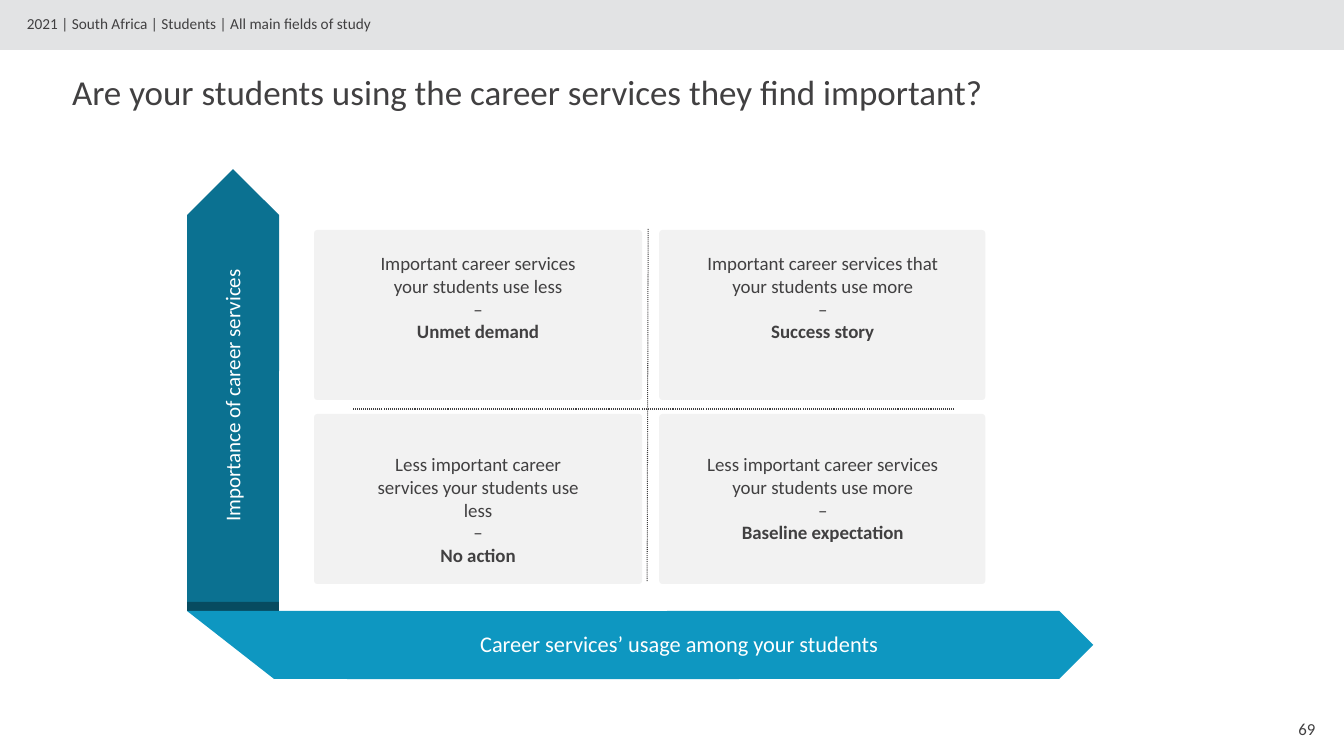
from lxml.etree import SubElement
from pptx import Presentation
from pptx.dml.color import RGBColor
from pptx.enum.dml import MSO_LINE
from pptx.enum.shapes import MSO_CONNECTOR, MSO_SHAPE
from pptx.enum.text import MSO_ANCHOR, MSO_AUTO_SIZE, PP_ALIGN
from pptx.oxml.ns import qn
from pptx.util import Inches, Pt

PX = 914400 / 100.8
INK = RGBColor(0x41, 0x40, 0x41)
WHITE = RGBColor(0xFF, 0xFF, 0xFF)
BAND = RGBColor(0xE2, 0xE3, 0xE4)
CARD = RGBColor(0xF2, 0xF2, 0xF2)
USAGE_BLUE = RGBColor(0x0E, 0x97, 0xC1)
IMPORTANCE_BLUE = RGBColor(0x0B, 0x71, 0x91)
FOLD_BLUE = RGBColor(0x07, 0x4B, 0x60)

# Each row of quadrants: inset of the text from the card's top, then its cards
QUADRANTS = [
    (17, [("Important career services your students use less", "Unmet demand"),
          ("Important career services that your students use more", "Success story")]),
    (34, [("Less important career services your students use less", "No action"),
          ("Less important career services your students use more", "Baseline expectation")]),
]
# Each column: left within the matrix, card width, text inset, text width
COLUMNS = [(0, 328, 48, 232), (345, 326, 37, 253)]


def emu(*lengths):
    return [round(length * PX) for length in lengths]


def set_all(target, values):
    for name, value in values.items():
        setattr(target, name, value)


def write(holder, lines, size, color=INK, align=PP_ALIGN.CENTER, anchor=MSO_ANCHOR.TOP):
    """Fill a text holder; lines are (text, bold) pairs."""
    frame = holder.text_frame
    set_all(frame, {"word_wrap": True, "auto_size": MSO_AUTO_SIZE.NONE,
                    "vertical_anchor": anchor})
    for index, (text, bold) in enumerate(lines):
        paragraph = frame.add_paragraph() if index else frame.paragraphs[0]
        paragraph.alignment = align
        run = paragraph.add_run()
        run.text = text
        set_all(run.font, {"name": "Calibri", "size": Pt(size), "bold": bold})
        run.font.color.rgb = color


def add_label(slide, box, lines, size, rotation=0, **style):
    label = slide.shapes.add_textbox(*emu(*box))
    label.rotation = rotation
    write(label, lines, size, **style)


def add_block(slide, kind, box, color, rotation=0, adjust=None):
    block = slide.shapes.add_shape(kind, *emu(*box))
    block.shadow.inherit = False
    block.rotation = rotation
    block.fill.solid()
    block.fill.fore_color.rgb = color
    block.line.fill.background()
    if adjust is not None:
        block.adjustments[0] = adjust
    return block


def add_divider(slide, start, end):
    divider = slide.shapes.add_connector(MSO_CONNECTOR.STRAIGHT, *emu(*start, *end))
    set_all(divider.line, {"width": Pt(0.75), "dash_style": MSO_LINE.ROUND_DOT})
    divider.line.color.rgb = INK
    SubElement(divider.element.spPr, qn("a:effectLst"))


def add_header(slide, left, top, width, height):
    add_block(slide, MSO_SHAPE.RECTANGLE, (left, top, width, height), BAND)
    add_label(slide, (left + 17, top + 9, 1145, 31),
              [("2021 | South Africa | Students | All main fields of study", False)],
              10.9, align=PP_ALIGN.LEFT)


def add_title(slide, *box):
    title = slide.shapes.title
    set_all(title, dict(zip(("left", "top", "width", "height"), emu(*box))))
    write(title, [("Are your students using the career services they find important?", False)],
          25, align=PP_ALIGN.LEFT)


def add_matrix(slide, left, top, width, height):
    row_height, row_step = 170, 184
    for row, (text_drop, cards) in enumerate(QUADRANTS):
        y = top + row * row_step
        for (x, card_width, inset, text_width), (finding, verdict) in zip(COLUMNS, cards):
            add_block(slide, MSO_SHAPE.ROUNDED_RECTANGLE,
                      (left + x, y, card_width, row_height), CARD, adjust=0.02)
            add_label(slide, (left + x + inset, y + text_drop, text_width, 102),
                      [(finding, False), ("–", False), (verdict, True)], 13.5)
    # Dotted cross between the quadrants
    add_divider(slide, (left + 334, top - 1), (left + 333, top + height - 2))
    add_divider(slide, (left + width - 31, top + 179), (left + 38, top + 179))


def add_importance_axis(slide, left, top, width, height):
    head, fold = 202, 9
    # The head is drawn lying down and turned about its centre
    add_block(slide, MSO_SHAPE.PENTAGON,
              (left + (width - head) / 2, top + (head - width) / 2, head, width),
              IMPORTANCE_BLUE, rotation=270)
    add_block(slide, MSO_SHAPE.RECTANGLE,
              (left, top + head, width, height - head - fold), IMPORTANCE_BLUE)
    add_block(slide, MSO_SHAPE.RECTANGLE,
              (left, top + height - fold, width, fold), FOLD_BLUE)
    add_label(slide, (left - 111, top + 209, 312, 35),
              [("Importance of career services", False)], 15, rotation=270, color=WHITE)


def add_usage_axis(slide, left, top, width, height):
    half = 426
    for x, rotation in ((width - half, 0), (126, 180)):
        add_block(slide, MSO_SHAPE.PENTAGON, (left + x, top, half, height),
                  USAGE_BLUE, rotation)
    slant = add_block(slide, MSO_SHAPE.PARALLELOGRAM, (left, top, 310, height),
                      USAGE_BLUE, adjust=1.28)
    slant.element.spPr.xfrm.set("flipV", "1")
    add_label(slide, (left + 101, top + 14, 782, 37),
              [("Career services’ usage among your students", False)], 16, color=WHITE)


def build_matrix_slide(deck):
    slide = deck.slides.add_slide(deck.slide_layouts[5])
    add_header(slide, 0, 0, 1344, 50)
    add_title(slide, 62, 65, 1265, 62)
    add_matrix(slide, 314, 230, 671, 354)
    add_importance_axis(slide, 187, 169, 92, 442)
    add_usage_axis(slide, 187, 611, 906, 68)
    # Page number
    add_label(slide, (1226, 709, 99, 40), [("69", False)], 12,
              align=PP_ALIGN.RIGHT, anchor=MSO_ANCHOR.MIDDLE)


def main():
    deck = Presentation()
    set_all(deck, {"slide_width": Inches(13.33), "slide_height": Inches(7.5)})
    build_matrix_slide(deck)
    deck.save("out.pptx")


if __name__ == "__main__":
    main()
